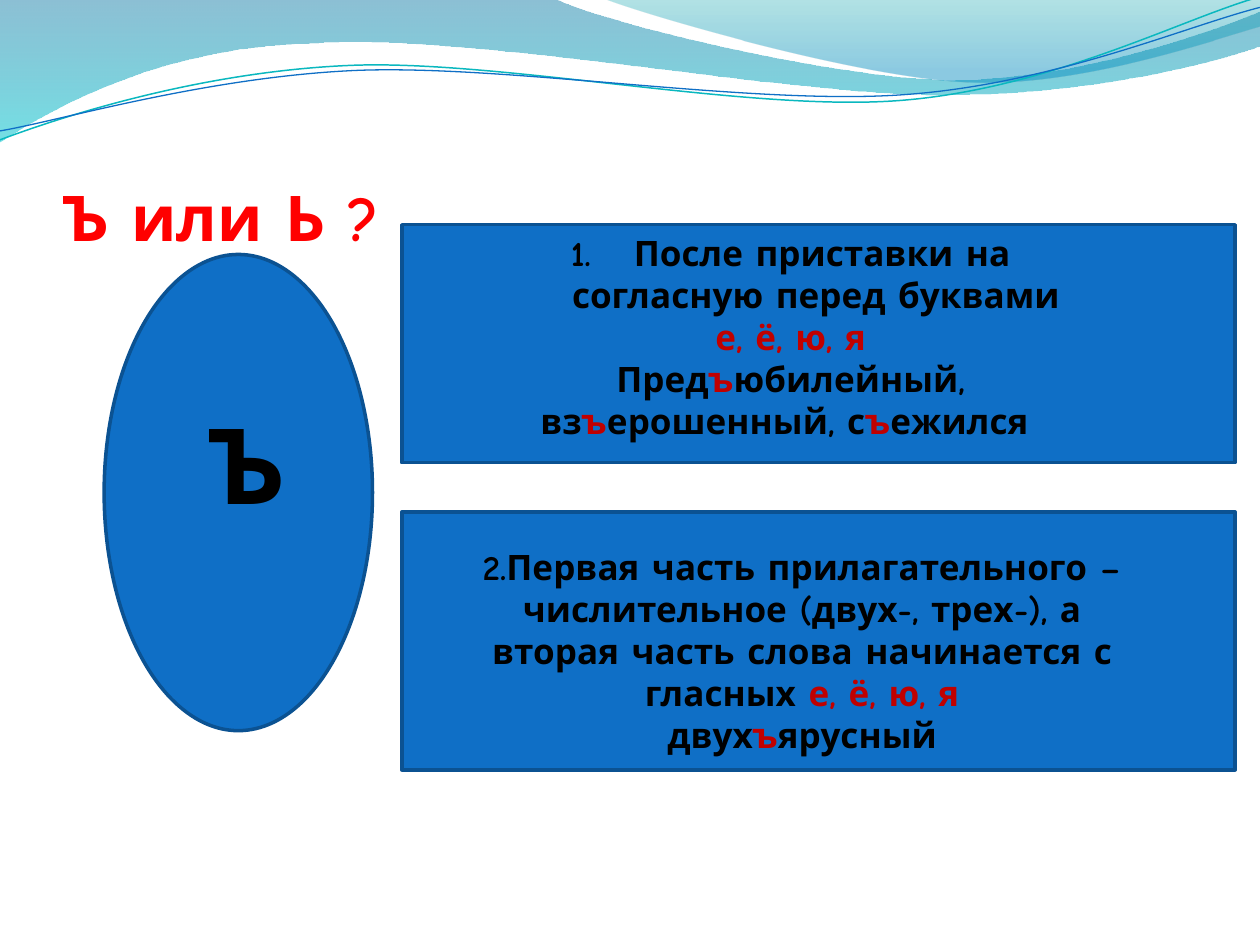
from dataclasses import dataclass
from itertools import chain
from typing import Optional

from lxml.etree import SubElement
from pptx import Presentation
from pptx.dml.color import RGBColor
from pptx.enum.shapes import MSO_SHAPE as Preset
from pptx.enum.text import MSO_ANCHOR as Anchor, MSO_AUTO_SIZE as AutoSize, PP_ALIGN as Align
from pptx.oxml import parse_xml
from pptx.oxml.ns import nsdecls, qn
from pptx.util import Cm, Pt

FONT = "Comic Neue"
BLACK, RED, DARK_RED = "000000", "FF0000", "C00000"
BLUE, DARK_BLUE = "0F6FC6", "0B5292"

Point = tuple[float, float]
Frame = tuple[float, float, float, float]


@dataclass
class Stop:
    position: float
    color: str
    opacity: int


@dataclass
class Wave:
    start: Point
    segments: list[tuple[Point, ...]]
    stops: tuple[Stop, ...] = ()
    line: str = ""
    width: float = 0


@dataclass
class Panel:
    preset: Preset
    frame: Frame


@dataclass
class Label:
    frame: Frame
    paragraphs: list[str]
    size: int
    color: str = BLACK
    align: Align = Align.CENTER
    numbered: bool = False
    outline: Optional[str] = None


WAVES = [
    Wave((0, 0), [
        ((11.18, -0.03),),
        ((12.09, 0.43), (16.87, 1.6), (19.25, 1.6)),
        ((21.67, 1.6), (24.33, 0.66), (25.4, 0.23)),
        ((25.43, 0.91),),
        ((24.97, 1.12), (22.1, 1.93), (18.95, 1.91)),
        ((15.8, 1.91), (9.7, 0.71), (6.53, 0.86)),
        ((3.28, 0.91), (1.17, 2.11), (-0.03, 2.87)),
    ], stops=(Stop(0, "0074A1", 45), Stop(1, "00C6CF", 55))),
    Wave((12.17, -0.03), [
        ((12.93, 0.28), (17.32, 1.57), (19.53, 1.65)),
        ((21.74, 1.75), (24.41, 0.81), (25.4, 0.53)),
        ((25.4, 0),),
    ], stops=(Stop(0, "00A1A9", 30), Stop(0.8, "008BBF", 45))),
    Wave((0, 2.82), [
        ((1.22, 2.36), (4.01, 1.45), (7.04, 1.32)),
        ((10.03, 1.19), (15.06, 2.26), (18.11, 2.03)),
        ((21.16, 1.8), (23.83, 0.38), (25.35, -0.05)),
    ], line="0AB8BF", width=0.85),
    Wave((0, 2.64), [
        ((1.19, 2.44), (4.17, 1.55), (7.19, 1.42)),
        ((10.24, 1.3), (15.16, 2.13), (18.21, 1.91)),
        ((21.23, 1.7), (23.9, 0.53), (25.4, 0.15)),
    ], line=BLUE, width=0.75),
]

TITLE = Label((1.28, 1.96, 23.06, 3.17), ["Ъ или Ь ?"], 36, RED, Align.LEFT, outline="00637F")

CONTENT = [
    (Panel(Preset.OVAL, (2.1, 5.13, 5.41, 9.6)),
     Label((3.7, 7.92, 2.59, 2.82), ["Ъ"], 60)),
    (Panel(Preset.RECTANGLE, (8.1, 4.53, 16.8, 4.8)),
     Label((9.44, 4.55, 13, 4.52), [
         "После приставки на согласную перед буквами ",
         "*е, ё, ю, я*",
         "Пред*ъ*юбилейный, вз*ъ*ерошенный, с*ъ*ежился ",
     ], 20, numbered=True)),
    (Panel(Preset.RECTANGLE, (8.1, 10.32, 16.8, 5.2)),
     Label((9.44, 10.87, 13.46, 6.25), [
         "2.Первая часть прилагательного – числительное (двух-, трех-), "
         "а вторая часть слова начинается с гласных *е, ё, ю, я*",
         "двух*ъ*ярусный",
     ], 20)),
]


def rgb(color: str) -> RGBColor:
    return RGBColor.from_string(color)


def lengths(values: tuple[float, ...]) -> list[Cm]:
    return [Cm(value) for value in values]


def bend(shape, segments: list[tuple[Point, ...]]) -> None:
    steps = iter(list(shape._element.iter(qn("a:lnTo"))))
    for segment in segments:
        first, *others = [next(steps) for _ in segment]
        if others:
            first.tag = qn("a:cubicBezTo")
            for step in others:
                first.append(step[0])
                step.getparent().remove(step)


def draw_wave(page, wave: Wave) -> None:
    builder = page.shapes.build_freeform(*lengths(wave.start))
    points = [lengths(point) for point in chain.from_iterable(wave.segments)]
    builder.add_line_segments(points, close=bool(wave.stops))
    shape = builder.convert_to_shape()
    bend(shape, wave.segments)
    shape.shadow.inherit = False
    if not wave.stops:
        shape.fill.background()
        shape.line.color.rgb = rgb(wave.line)
        shape.line.width = Pt(wave.width)
        return
    shape.line.fill.background()
    shape.fill.gradient()
    shape.fill.gradient_angle = 270
    for target, stop in zip(shape.fill.gradient_stops, wave.stops):
        target.position = stop.position
        target.color.rgb = rgb(stop.color)
    colors = list(shape._element.spPr.iter(qn("a:srgbClr")))
    for element, stop in zip(colors, wave.stops):
        SubElement(element, qn("a:alpha"), val=str(stop.opacity * 1000))


def draw_panel(page, panel: Panel) -> None:
    shape = page.shapes.add_shape(panel.preset, *lengths(panel.frame))
    shape.shadow.inherit = False
    shape.fill.solid()
    shape.fill.fore_color.rgb = rgb(BLUE)
    shape.line.color.rgb = rgb(DARK_BLUE)
    shape.line.width = Pt(2)


def number(para) -> None:
    properties = para._p.get_or_add_pPr()
    properties.set("marL", str(Cm(1.27)))
    properties.set("indent", str(-Cm(1.27)))
    SubElement(properties, qn("a:buAutoNum"), type="arabicPeriod")


def outline_text(span, color: str) -> None:
    span._r.get_or_add_rPr().insert(0, parse_xml(
        f'<a:ln {nsdecls("a")} w="{Pt(1)}"><a:solidFill>'
        f'<a:srgbClr val="{color}"/></a:solidFill></a:ln>'))


def draw_label(page, label: Label, frame_format: dict) -> None:
    box = page.shapes.add_textbox(*lengths(label.frame))
    frame = box.text_frame
    for name, value in frame_format.items():
        setattr(frame, name, value)
    font_format = {"name": FONT, "size": Pt(label.size), "bold": True}
    for index, text in enumerate(label.paragraphs):
        para = frame.add_paragraph() if index else frame.paragraphs[0]
        para.alignment = label.align
        if label.numbered and index == 0:
            number(para)
        for part, words in enumerate(text.split("*")):
            if not words:
                continue
            span = para.add_run()
            span.text = words
            for name, value in font_format.items():
                setattr(span.font, name, value)
            span.font.color.rgb = rgb(DARK_RED if part % 2 else label.color)
            if label.outline:
                outline_text(span, label.outline)


def main() -> None:
    deck = Presentation()
    deck.slide_width, deck.slide_height = Cm(25.4), Cm(19.05)
    page = deck.slides.add_slide(deck.slide_layouts[6])
    for wave in WAVES:
        draw_wave(page, wave)
    draw_label(page, TITLE, {"word_wrap": True, "vertical_anchor": Anchor.BOTTOM,
                             "margin_left": 0, "margin_right": 0, "margin_bottom": 0})
    for panel, label in CONTENT:
        draw_panel(page, panel)
        draw_label(page, label, {"word_wrap": True, "auto_size": AutoSize.SHAPE_TO_FIT_TEXT})
    deck.save("out.pptx")


if __name__ == "__main__":
    main()
